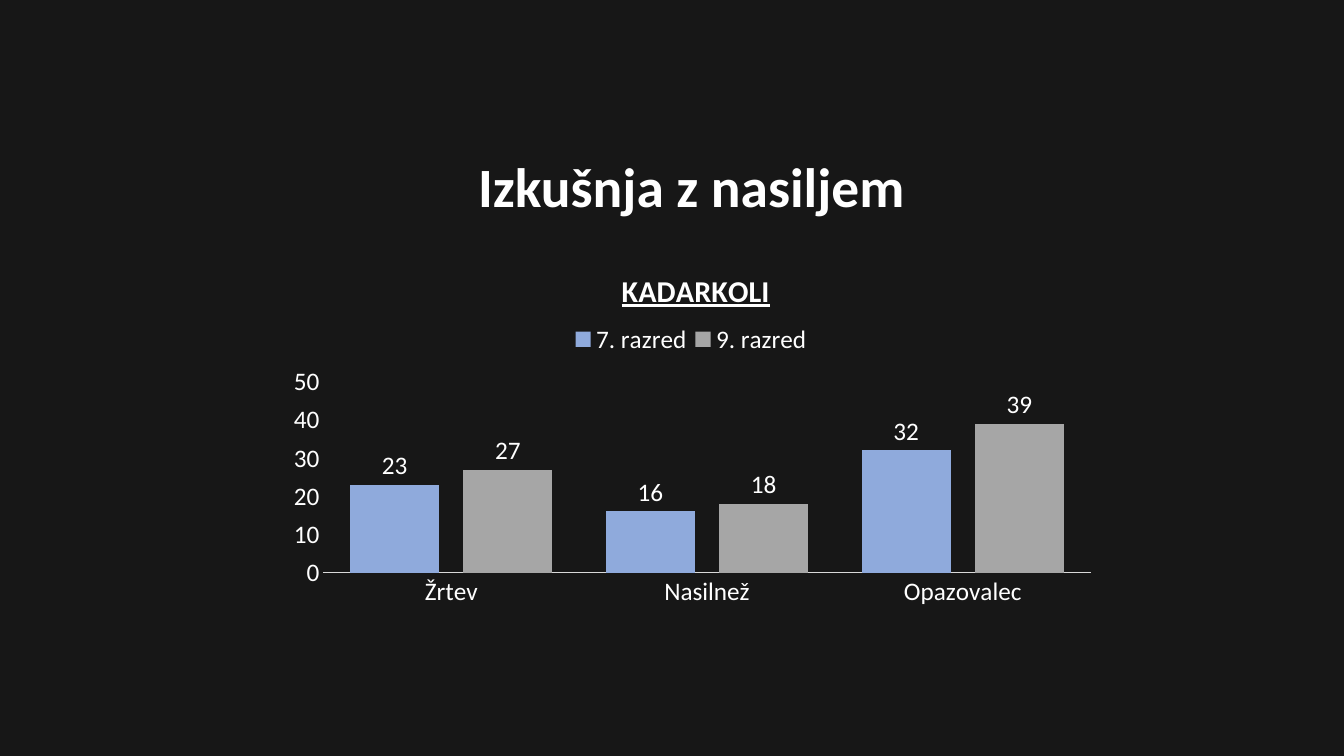
from lxml import etree
from pptx import Presentation
from pptx.chart.data import CategoryChartData
from pptx.dml.color import RGBColor
from pptx.enum import chart as charts, text
from pptx.oxml import parse_xml
from pptx.oxml.ns import nsdecls, qn
from pptx.util import Pt

COLORS = {
    "background": "171717",
    "text": "FFFFFF",
    "axis": "D9D9D9",
    "grade_7": "8FAADC",
    "grade_9": "A6A6A6",
}
FONT = "Calibri"
ROLES = ("Žrtev", "Nasilnež", "Opazovalec")
GRADES = (
    ("7. razred", (23, 16, 32), "grade_7"),
    ("9. razred", (27, 18, 39), "grade_9"),
)


def color(name):
    return RGBColor.from_string(COLORS[name])


def style_font(font, size=18, bold=False, underline=False):
    font.name = FONT
    font.size = Pt(size)
    font.bold = bold
    font.underline = underline
    font.color.rgb = color("text")


def write(frame, words, align=text.PP_ALIGN.CENTER, spacing=None, **style):
    para = frame.paragraphs[0]
    para.alignment = align
    para.line_spacing = spacing
    span = para.add_run()
    span.text = words
    style_font(span.font, **style)


def place(element, target=None, **fractions):
    """Fix a chart part at fractions (x, y, w, h) of the chart's frame."""
    for old in element.findall(qn("c:layout")):
        element.remove(old)
    layout = parse_xml(f"<c:layout {nsdecls('c')}><c:manualLayout/></c:layout>")
    manual = layout[0]
    settings = [("layoutTarget", target)] if target else []
    settings += [(key + "Mode", "edge") for key in "xy"]
    settings += fractions.items()
    for tag, value in settings:
        etree.SubElement(manual, qn("c:" + tag)).set("val", str(value))
    before = [child for child in element
              if child.tag in (qn("c:tx"), qn("c:legendPos"))]
    element.insert(element.index(before[-1]) + 1 if before else 0, layout)


def add_title(page, left, top, width, height):
    box = page.shapes.add_textbox(Pt(left), Pt(top), Pt(width), Pt(height))
    frame = box.text_frame
    frame.word_wrap = True
    frame.vertical_anchor = text.MSO_ANCHOR.MIDDLE
    frame.margin_top = Pt(43.5)
    frame.margin_bottom = 0
    write(frame, "Izkušnja z nasiljem", spacing=0.9, size=39.6, bold=True)


def style_axes(chart):
    for axis in (chart.category_axis, chart.value_axis):
        axis.major_tick_mark = charts.XL_TICK_MARK.NONE
        axis.minor_tick_mark = charts.XL_TICK_MARK.NONE
        axis.has_major_gridlines = False
        style_font(axis.tick_labels.font)
    line = chart.category_axis.format.line
    line.color.rgb = color("axis")
    line.width = Pt(0.75)
    values = chart.value_axis
    values.format.line.fill.background()
    values.minimum_scale, values.maximum_scale, values.major_unit = 0, 50, 10


def style_columns(plot):
    plot.gap_width = 60
    plot.overlap = -27
    plot.vary_by_categories = False
    for series, (_, _, fill_name) in zip(plot.series, GRADES):
        series.format.fill.solid()
        series.format.fill.fore_color.rgb = color(fill_name)
        labels = series.data_labels
        labels.show_value = True
        labels.position = charts.XL_LABEL_POSITION.OUTSIDE_END
        style_font(labels.font)


def add_experience_chart(page, left, top, width, height):
    data = CategoryChartData()
    data.categories = ROLES
    for name, values, _ in GRADES:
        data.add_series(name, values)
    chart = page.shapes.add_chart(
        charts.XL_CHART_TYPE.COLUMN_CLUSTERED,
        Pt(left), Pt(top), Pt(width), Pt(height), data).chart
    style_font(chart.font)

    title = chart.chart_title
    write(title.text_frame, "KADARKOLI", size=21.6, bold=True, underline=True)
    title.include_in_layout = False
    place(title._element, x=0.41, y=0.06)

    chart.has_legend = True
    chart.legend.position = charts.XL_LEGEND_POSITION.TOP
    chart.legend.include_in_layout = False
    style_font(chart.legend.font)
    place(chart.legend._element, x=0.35, y=0.22, w=0.3, h=0.08)

    style_axes(chart)
    style_columns(chart.plots[0])
    plot_area = chart._chartSpace.chart.plotArea
    place(plot_area, target="inner", x=0.057, y=0.375, w=0.925, h=0.512)


def main():
    deck = Presentation()
    deck.slide_width, deck.slide_height = Pt(960), Pt(540)
    page = deck.slides.add_slide(deck.slide_layouts[6])
    page.background.fill.solid()
    page.background.fill.fore_color.rgb = color("background")
    add_title(page, 170, 89.3, 648, 48.2)
    add_experience_chart(page, 197.3, 172.8, 592.5, 266.4)
    deck.save("out.pptx")


if __name__ == "__main__":
    main()
